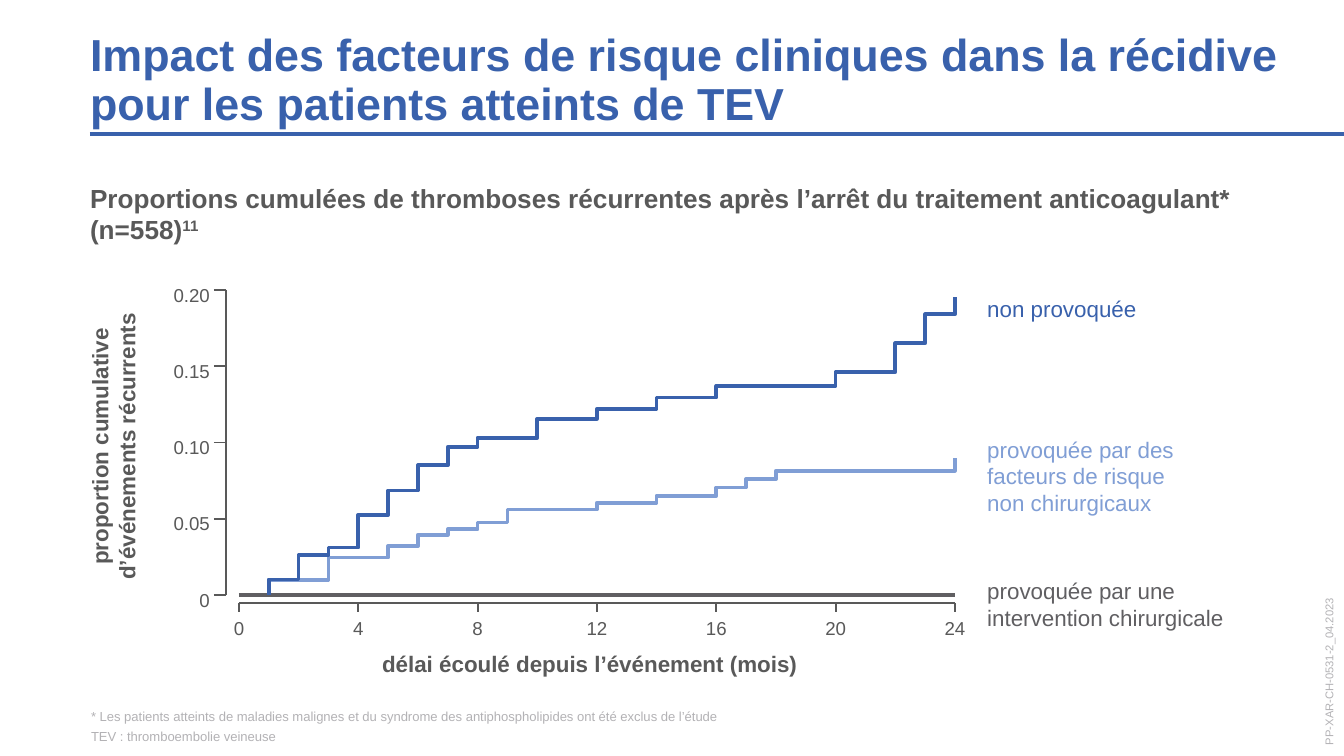
"""Build the slide on recurrence of thrombosis by clinical risk factor."""
import pptx
import pptx.util
import pptx.dml.color
import pptx.enum.shapes
import pptx.enum.text
import pptx.oxml.ns
from lxml import etree

HUES = {"blue": "3961AC", "light": "809ED5", "dark": "605F62",
        "text": "595959", "pale": "B3B2B5"}
TITLE = ("Impact des facteurs de risque cliniques dans la récidive "
         "pour les patients atteints de TEV")
LEAD = ("Proportions cumulées de thromboses récurrentes après l’arrêt "
        "du traitement anticoagulant* (n=558)")
REF = "11"
NOTES = ("* Les patients atteints de maladies malignes et du syndrome des "
         "antiphospholipides ont été exclus de l’étude\n"
         "TEV : thromboembolie veineuse")
CODE = "PP-XAR-CH-0531-2_04.2023"
XNAME = "délai écoulé depuis l’événement (mois)"
YNAME = "proportion cumulative\vd’événements récurrents"
LEGEND = [
    ("provoquée par une\vintervention chirurgicale", "dark", 571, 67),
    ("provoquée par des\vfacteurs de risque\vnon chirurgicaux", "light", 429, 95),
    ("non provoquée", "blue", 289, 40),
]
XTICKS = range(0, 25, 4)
YTICKS = {0: "0", 50: "0.05", 100: "0.10", 150: "0.15", 200: "0.20"}
CURVES = {
    "light": [(1, 10), (3, 24.5), (5, 32), (6, 39.5), (7, 43), (8, 47.5),
              (9, 56), (12, 60.5), (14, 65), (16, 70.5), (17, 76),
              (18, 81.5), (24, 89.5)],
    "blue": [(1, 10), (2, 26), (3, 31), (4, 52.5), (5, 68.5), (6, 85),
             (7, 97), (8, 103), (10, 115.5), (12, 122), (14, 129.5),
             (16, 137), (20, 146), (22, 165), (23, 184), (24, 195.5)],
}
LEFT, RIGHT, BASE, TOP = 239, 955, 595, 290
XAXIS, YAXIS = 603, 226

ANCHOR = pptx.enum.text.MSO_ANCHOR
ALIGN = pptx.enum.text.PP_ALIGN


def px(n):
    return pptx.util.Emu(round(n * 914400 / 134.4))


def hue(name):
    return pptx.dml.color.RGBColor.from_string(HUES[name])


def month(m):
    return LEFT + m * (RIGHT - LEFT) / 24


def level(v):
    return BASE - v * (BASE - TOP) / 200


def place(shape, box):
    shape.left, shape.top, shape.width, shape.height = map(px, box)


def style(shape, size, color, bold=False, align=ALIGN.LEFT,
          anchor=ANCHOR.TOP, flush=False):
    frame = shape.text_frame
    frame.word_wrap = True
    frame.auto_size = pptx.enum.text.MSO_AUTO_SIZE.NONE
    frame.vertical_anchor = anchor
    if flush:
        frame.margin_left = frame.margin_right = 0
        frame.margin_top = frame.margin_bottom = 0
    for para in frame.paragraphs:
        para.alignment = align
        para.space_before = pptx.util.Pt(0)
        for run in para.runs:
            font = run.font
            font.name, font.bold = "Arial", bold
            font.size = pptx.util.Pt(size)
            font.color.rgb = hue(color)


def write(slide, text, box, *args, **kwargs):
    shape = slide.shapes.add_textbox(*map(px, box))
    shape.text_frame.text = text
    style(shape, *args, **kwargs)
    return shape


def rule(slide, x1, y1, x2, y2, color="text", width=1):
    line = slide.shapes.add_connector(
        pptx.enum.shapes.MSO_CONNECTOR.STRAIGHT, *map(px, (x1, y1, x2, y2)))
    line.line.color.rgb = hue(color)
    line.line.width = pptx.util.Pt(width)
    etree.SubElement(line._element.spPr, pptx.oxml.ns.qn("a:effectLst"))


def curve(slide, color, steps):
    points, last = [], 0
    for m, v in steps:
        points += [(px(month(m)), px(level(last))),
                   (px(month(m)), px(level(v)))]
        last = v
    build = slide.shapes.build_freeform(*points[0])
    build.add_line_segments(points[1:], close=False)
    shape = build.convert_to_shape()
    shape.shadow.inherit = False
    shape.fill.background()
    shape.line.color.rgb = hue(color)
    shape.line.width = pptx.util.Pt(2)


def heads(slide):
    title, lead = slide.shapes.title, slide.placeholders[1]
    place(title, (90, 32, 1218, 98))
    title.text_frame.text = TITLE
    style(title, 24, "blue", True, anchor=ANCHOR.BOTTOM, flush=True)
    title.text_frame.paragraphs[0].line_spacing = 0.9

    place(lead, (90, 182, 1216, 63))
    lead.text_frame.text = LEAD
    para = lead.text_frame.paragraphs[0]
    ref = para.add_run()
    ref.text = REF
    style(lead, 14, "text", True, flush=True)
    ref.font._element.set("baseline", "30000")
    props = para._p.get_or_add_pPr()
    props.set("marL", "0")
    props.set("indent", "0")
    etree.SubElement(props, pptx.oxml.ns.qn("a:buNone"))
    rule(slide, 90, 134, 1344, 134, "blue", 2.25)


def plot(slide):
    rule(slide, LEFT, XAXIS, RIGHT, XAXIS)
    rule(slide, YAXIS, TOP, YAXIS, BASE)
    for m in XTICKS:
        x = month(m)
        rule(slide, x, XAXIS, x, XAXIS + 9)
        write(slide, str(m), (x - 50, 610, 100, 36), 10, "text",
              align=ALIGN.CENTER)
    for v, text in YTICKS.items():
        y = level(v)
        rule(slide, YAXIS - 12, y, YAXIS, y)
        write(slide, text, (109, y - 13, 114, 36), 10, "text",
              align=ALIGN.RIGHT)
    rule(slide, LEFT, BASE, RIGHT, BASE, "dark", 2)
    for color, steps in CURVES.items():
        curve(slide, color, steps)
    for text, color, y, tall in LEGEND:
        write(slide, text, (974, y, 350, tall), 12, color)
    write(slide, XNAME, (225, 644, 730, 40), 12, "text", True, ALIGN.CENTER)
    name = write(slide, YNAME, (-40, 413, 306, 67), 12, "text", True,
                 ALIGN.CENTER)
    name.rotation = 270


def main():
    deck = pptx.Presentation()
    deck.slide_width, deck.slide_height = px(1344), px(756)
    slide = deck.slides.add_slide(deck.slide_layouts[1])
    heads(slide)
    plot(slide)
    notes = write(slide, NOTES, (91, 708, 1163, 36), 7, "pale",
                  anchor=ANCHOR.BOTTOM, flush=True)
    for para in notes.text_frame.paragraphs:
        para.space_after = pptx.util.Pt(2)
    code = write(slide, CODE, (1235, 643, 188, 16), 6, "pale",
                 anchor=ANCHOR.MIDDLE, flush=True)
    code.rotation = 270
    deck.save("out.pptx")


if __name__ == "__main__":
    main()
